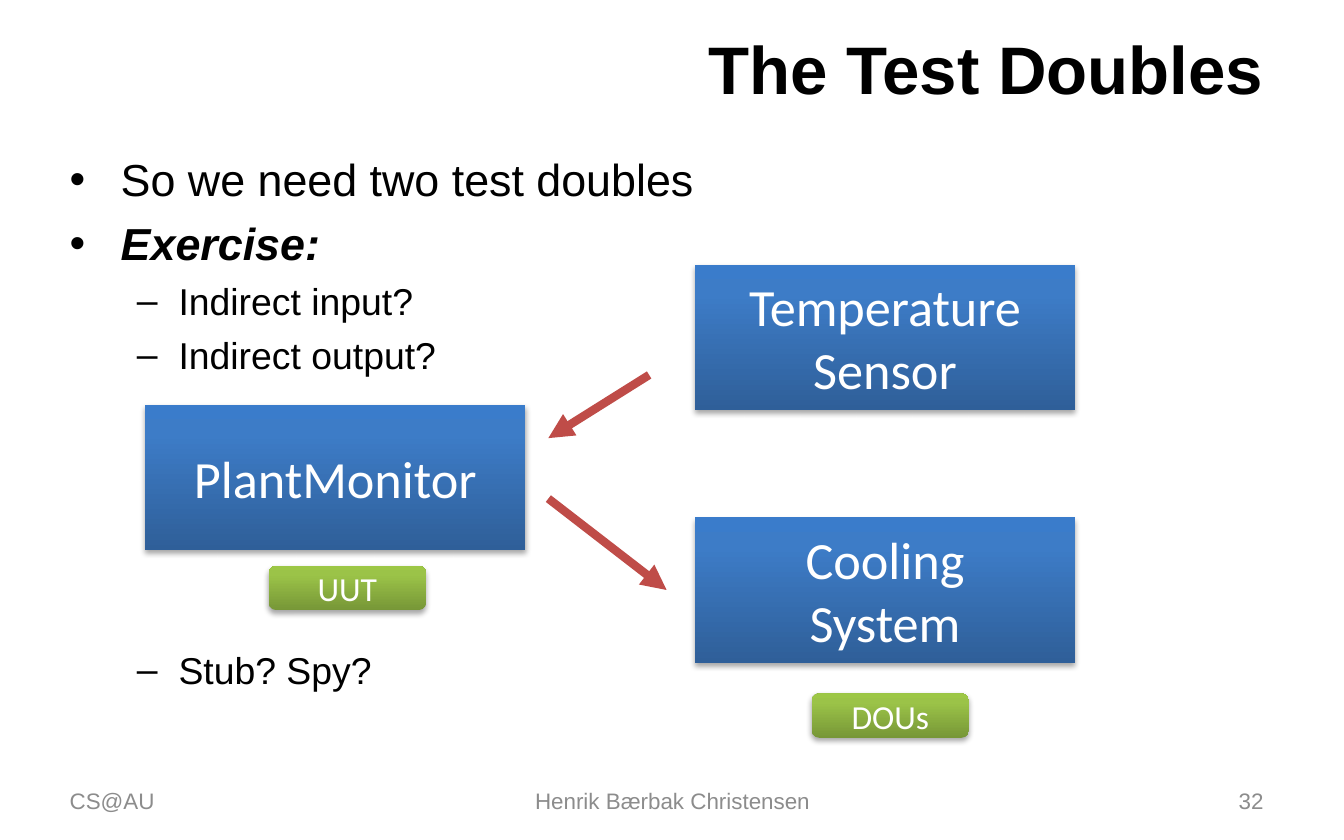
from copy import deepcopy
from typing import NamedTuple

from lxml import etree
from pptx import Presentation
from pptx.dml.color import RGBColor
from pptx.enum import shapes, text
from pptx.oxml import ns
from pptx.util import Inches, Pt

ALIGN = text.PP_ALIGN
BLUE = ("2F5F99", "3D7CC7", "3A7CCB")
GREEN = ("779737", "9BC348", "9DC746")
RED, GREY, BLACK, WHITE = "BF4C48", "8C8C8C", "000000", "FFFFFF"


class Bullet(NamedTuple):
    words: str
    level: int = 0
    gap: float = 0
    emphasis: bool = False


class Level(NamedTuple):
    mark: str
    indent: float
    hanging: float
    size: int


class Block(NamedTuple):
    label: str
    left: float
    top: float


class Arrow(NamedTuple):
    start: tuple[float, float]
    end: tuple[float, float]


class Footer(NamedTuple):
    words: str
    left: float
    width: float
    align: ALIGN


LEVELS = (Level("•", 0.38, 0.38, 24), Level("–", 0.81, 0.31, 20))
BULLETS = (
    Bullet("So we need two test doubles"),
    Bullet("Exercise:", gap=5.5, emphasis=True),
    Bullet("Indirect input?", 1, 4.8),
    Bullet("Indirect output?", 1, 4.8),
    Bullet("Stub? Spy?", 1, 144.5),  # leaves room for the diagram
)
COMPONENTS = (
    Block("PlantMonitor", 1.08, 3.01),
    Block("Cooling\nSystem", 5.17, 3.85),
    Block("Temperature\nSensor", 5.17, 1.97),
)
ROLES = (Block("UUT", 2, 4.21), Block("DOUs", 6.04, 5.16))
ARROWS = (Arrow((4.83, 2.79), (4.08, 3.26)), Arrow((4.08, 3.71), (4.96, 4.39)))
FOOTERS = (
    Footer("CS@AU", 0.42, 2.33, ALIGN.LEFT),
    Footer("Henrik Bærbak Christensen", 3.42, 3.17, ALIGN.CENTER),
    Footer("32", 7.17, 2.33, ALIGN.RIGHT),
)


def rgb(value: str) -> RGBColor:
    return RGBColor.from_string(value)


def add_xml(parent, tag: str, **attributes):
    return etree.SubElement(parent, ns.qn(tag), attributes)


def write(paragraph, words: str, *, size: float, color: str = BLACK, font: str = "Arial",
          align: ALIGN = ALIGN.LEFT, bold: bool = False, italic: bool = False) -> None:
    paragraph.alignment = align
    for number, line in enumerate(words.split("\n")):
        if number:
            paragraph.add_line_break()
        run = paragraph.add_run()
        run.text = line
        run.font.name, run.font.size = font, Pt(size)
        run.font.bold, run.font.italic = bold, italic
        run.font.color.rgb = rgb(color)


def add_text_frame(slide, left: float, top: float, width: float, height: float):
    frame = slide.shapes.add_textbox(*map(Inches, (left, top, width, height))).text_frame
    frame.word_wrap = True
    return frame


def add_title(slide, words: str) -> None:
    title = slide.shapes.title
    title.left, title.top, title.width, title.height = map(Inches, (0.5, 0.18, 9, 0.65))
    title.text_frame.vertical_anchor = text.MSO_ANCHOR.MIDDLE
    write(title.text_frame.paragraphs[0], words, size=36, bold=True, align=ALIGN.RIGHT)


def add_bullets(slide, bullets: tuple[Bullet, ...]) -> None:
    frame = add_text_frame(slide, 0.42, 1.08, 9.08, 4.68)
    for number, bullet in enumerate(bullets):
        paragraph = frame.add_paragraph() if number else frame.paragraphs[0]
        level = LEVELS[bullet.level]
        paragraph.level = bullet.level
        paragraph.space_before = Pt(bullet.gap)
        properties = paragraph._p.get_or_add_pPr()
        properties.set("marL", str(Inches(level.indent)))
        properties.set("indent", str(-Inches(level.hanging)))
        add_xml(properties, "a:buFont", typeface="Arial")
        add_xml(properties, "a:buChar", char=level.mark)
        write(paragraph, bullet.words, size=level.size,
              bold=bullet.emphasis, italic=bullet.emphasis)


def add_gradient(shape, colors: tuple[str, str, str]) -> None:
    shape.fill.gradient()
    shape.fill.gradient_angle = 90
    first = shape._element.spPr.find(".//" + ns.qn("a:gs"))
    first.addnext(deepcopy(first))
    for stop, color, position in zip(shape.fill.gradient_stops, colors, (0, 0.8, 1)):
        stop.color.rgb = rgb(color)
        stop.position = position


def add_shadow(shape) -> None:
    shape.shadow.inherit = False
    effects = shape._element.spPr.find(ns.qn("a:effectLst"))
    shadow = add_xml(effects, "a:outerShdw", blurRad=str(Pt(3.1)), dist=str(Pt(1.8)),
                     dir="5400000", rotWithShape="0")
    add_xml(add_xml(shadow, "a:srgbClr", val=BLACK), "a:alpha", val="35000")


def add_block(slide, block: Block, kind: shapes.MSO_SHAPE, width: float, height: float,
              colors: tuple[str, str, str], size: float) -> None:
    shape = slide.shapes.add_shape(
        kind, *map(Inches, (block.left, block.top, width, height)))
    add_gradient(shape, colors)
    shape.line.fill.background()
    add_shadow(shape)
    shape.text_frame.vertical_anchor = text.MSO_ANCHOR.MIDDLE
    write(shape.text_frame.paragraphs[0], block.label, size=size, color=WHITE,
          font="Calibri", align=ALIGN.CENTER)


def add_arrow(slide, arrow: Arrow) -> None:
    connector = slide.shapes.add_connector(
        shapes.MSO_CONNECTOR.STRAIGHT, *map(Inches, arrow.start + arrow.end))
    connector.line.color.rgb = rgb(RED)
    connector.line.width = Pt(4.5)
    add_xml(connector.line._get_or_add_ln(), "a:tailEnd", type="triangle")
    add_xml(connector._element.spPr, "a:effectLst")


def add_footer(slide, footer: Footer) -> None:
    frame = add_text_frame(slide, footer.left, 5.79, footer.width, 0.33)
    frame.vertical_anchor = text.MSO_ANCHOR.MIDDLE
    write(frame.paragraphs[0], footer.words, size=12, color=GREY, align=footer.align)


def main() -> None:
    deck = Presentation()
    deck.slide_width, deck.slide_height = Inches(10), Inches(6.25)
    slide = deck.slides.add_slide(deck.slide_layouts.get_by_name("Title Only"))

    # Title, questions and footer line
    add_title(slide, "The Test Doubles")
    add_bullets(slide, BULLETS)
    for footer in FOOTERS:
        add_footer(slide, footer)

    # Components, the data flow between them, and their test roles
    for component in COMPONENTS:
        add_block(slide, component, shapes.MSO_SHAPE.RECTANGLE, 2.83, 1.08, BLUE, 28)
    for arrow in ARROWS:
        add_arrow(slide, arrow)
    for role in ROLES:
        add_block(slide, role, shapes.MSO_SHAPE.ROUNDED_RECTANGLE, 1.17, 0.33, GREEN, 18)

    deck.save("out.pptx")


if __name__ == "__main__":
    main()
